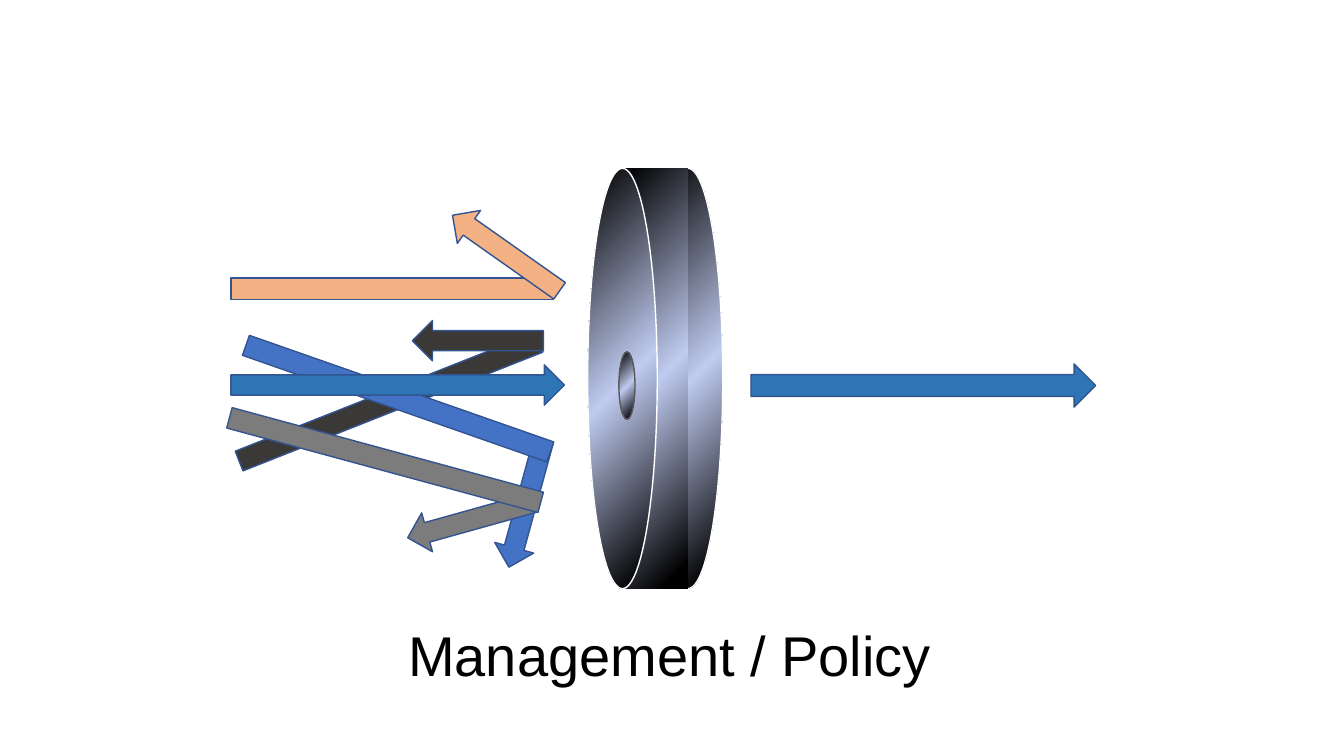
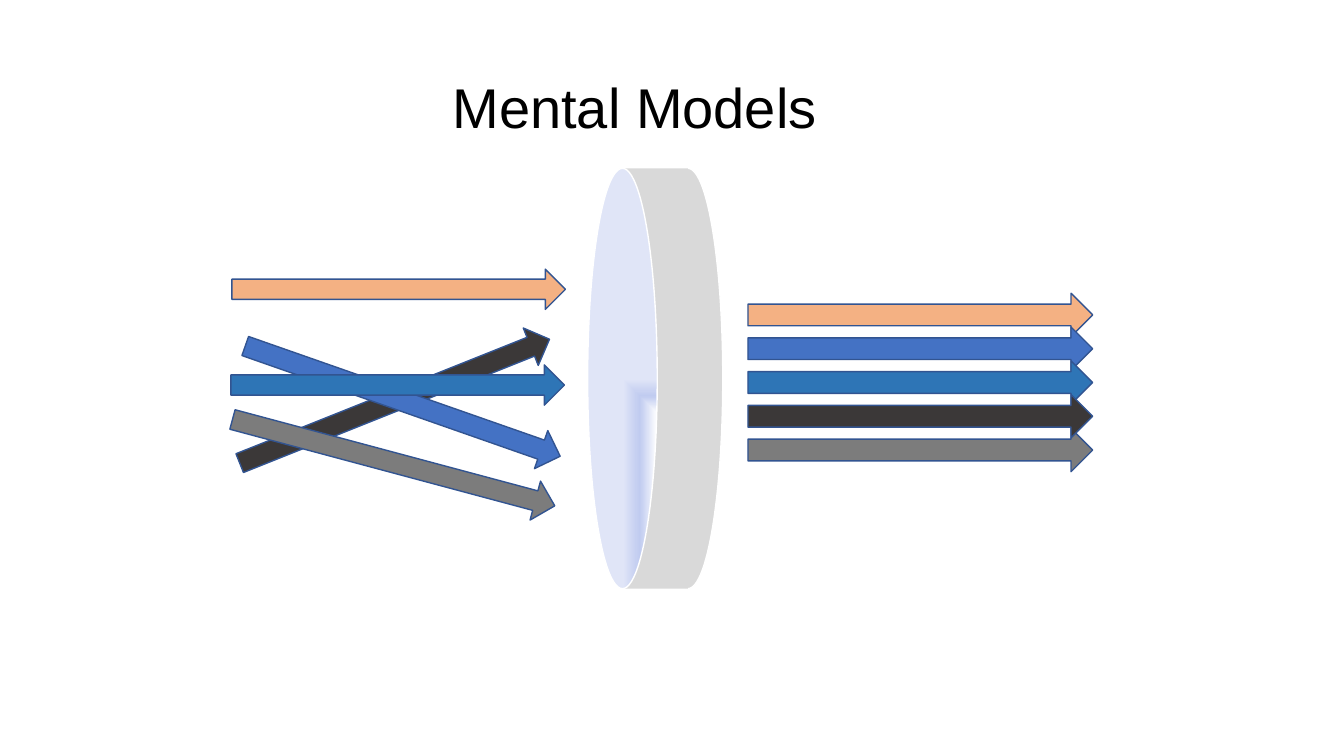
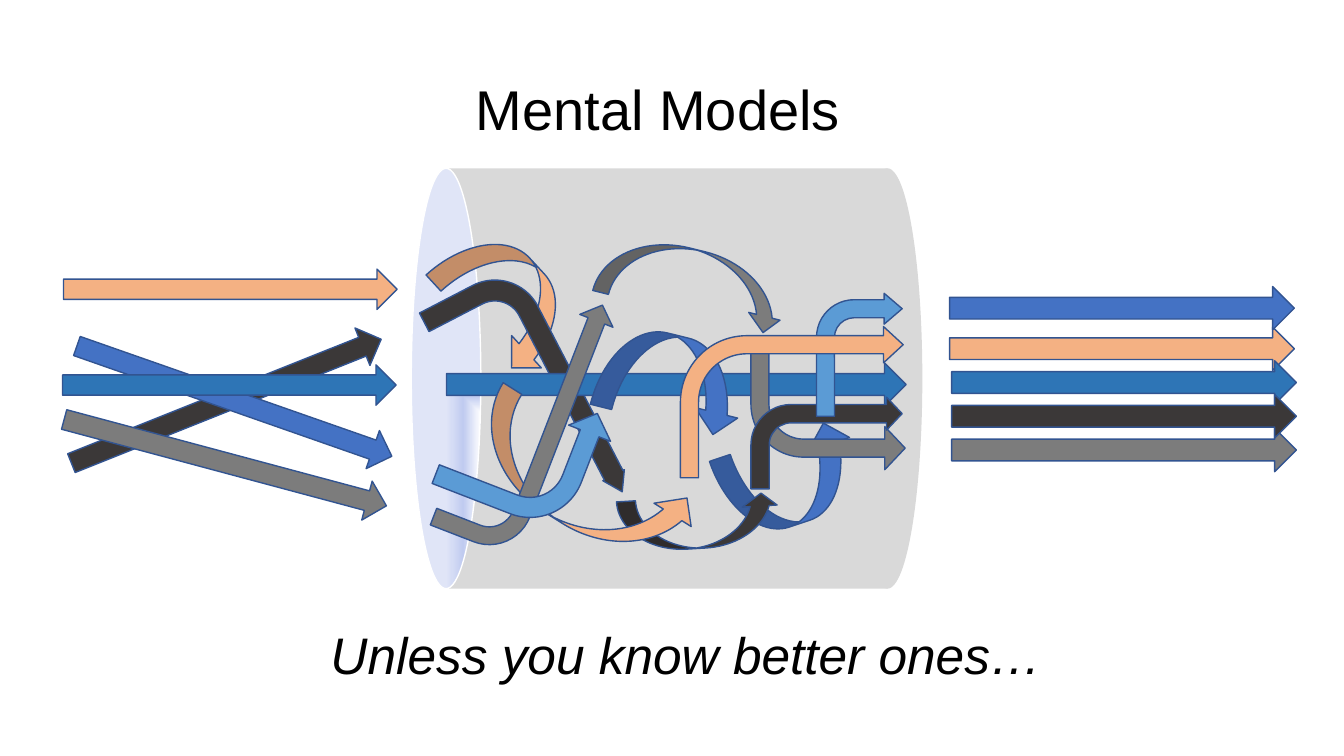
import dataclasses

import pptx
import pptx.dml.color
import pptx.enum.shapes
import pptx.enum.text
import pptx.oxml
import pptx.oxml.ns
import pptx.util

KINDS = pptx.enum.shapes.MSO_SHAPE
ARROW, BEAM, OVAL = KINDS.RIGHT_ARROW, KINDS.RECTANGLE, KINDS.OVAL
BENT, CURVED = KINDS.BENT_ARROW, KINDS.CURVED_RIGHT_ARROW

# Grid of 0.1 inch cells: every length below counts columns or rows
CELL = 91440
COLUMNS, ROWS = 133.33, 75


@dataclasses.dataclass(frozen=True)
class Gradient:
    path_kind: str
    stops: tuple


@dataclasses.dataclass(frozen=True)
class Theme:
    orange: str = "F4B183"
    blue: str = "4472C4"
    steel: str = "2E75B6"
    sky: str = "5B9BD5"
    dark: str = "3B3838"
    gray: str = "7C7C7C"
    outline: str = "325491"
    drum: str = "D9D9D9"
    white: str = "FFFFFF"
    hub_edge: str = "595959"
    text: str = "000000"
    metal: Gradient = Gradient("circle", ((5, "000000"), (49, "C0CBF0"), (99, "000000")))
    glass: Gradient = Gradient("rect", ((0, "FFFFFF"), (50, "C0CBF0"), (100, "E0E5F7")))
    font: str = "Arial"
    title_size: float = 40
    caption_size: float = 36.7
    line_width: float = 1


THEME = Theme()


@dataclasses.dataclass(frozen=True)
class Part:
    """A shape placed relative to the origin of its region."""
    kind: object
    left: float
    top: float
    width: float
    height: float
    fill: object
    line: str = THEME.outline
    rotation: float = 0
    flip: bool = False
    adjustments: tuple = ()


def cells(count):
    return pptx.util.Emu(round(count * CELL))


def rgb(value):
    return pptx.dml.color.RGBColor.from_string(value)


def fill_gradient(shape, gradient):
    """Fill from the lower right corner outwards."""
    shape.fill.gradient()
    stops = "".join(
        f'<a:gs pos="{position * 1000}"><a:srgbClr val="{color}"/></a:gs>'
        for position, color in gradient.stops)
    new_fill = pptx.oxml.parse_xml(
        f'<a:gradFill {pptx.oxml.ns.nsdecls("a")}><a:gsLst>{stops}</a:gsLst>'
        f'<a:path path="{gradient.path_kind}">'
        '<a:fillToRect l="100000" t="100000"/></a:path></a:gradFill>')
    properties = shape.element.spPr
    properties.replace(properties.find(pptx.oxml.ns.qn("a:gradFill")), new_fill)


def draw(shapes, origin, parts):
    left, top = origin
    for part in parts:
        shape = shapes.add_shape(
            part.kind, cells(left + part.left), cells(top + part.top),
            cells(part.width), cells(part.height))
        shape.shadow.inherit = False
        shape.rotation = part.rotation
        if part.flip:
            shape.element.spPr.find(pptx.oxml.ns.qn("a:xfrm")).set("flipV", "1")
        for index, value in enumerate(part.adjustments):
            shape.adjustments[index] = value
        if isinstance(part.fill, Gradient):
            fill_gradient(shape, part.fill)
        else:
            shape.fill.solid()
            shape.fill.fore_color.rgb = rgb(part.fill)
        if part.line:
            shape.line.color.rgb = rgb(part.line)
            shape.line.width = pptx.util.Pt(THEME.line_width)
        else:
            shape.line.fill.background()


# Text
def write(shape, box, text, size, italic=False):
    for name, value in zip(("left", "top", "width", "height"), box):
        setattr(shape, name, cells(value))
    frame_format = {
        "text": text,
        "word_wrap": False,
        "auto_size": pptx.enum.text.MSO_AUTO_SIZE.SHAPE_TO_FIT_TEXT,
        "vertical_anchor": pptx.enum.text.MSO_ANCHOR.TOP,
    }
    for name, value in frame_format.items():
        setattr(shape.text_frame, name, value)
    paragraph = shape.text_frame.paragraphs[0]
    paragraph.alignment = pptx.enum.text.PP_ALIGN.LEFT
    font = paragraph.runs[0].font
    font_format = {"name": THEME.font, "size": pptx.util.Pt(size), "italic": italic}
    for name, value in font_format.items():
        setattr(font, name, value)
    font.color.rgb = rgb(THEME.text)


def titled_slide(presentation, box, title):
    slide = presentation.slides.add_slide(presentation.slide_layouts[5])
    write(slide.shapes.title, box, title, THEME.title_size)
    return slide


def caption(slide, box, text):
    shape = slide.shapes.add_textbox(*map(cells, box))
    write(shape, box, text, THEME.caption_size, italic=True)


# Regions
def drum(slide, origin, depth, face, body, rear_line=THEME.white):
    """A cylinder on its side: rear end, body, front face."""
    width, height = 6.9, 41.7
    draw(slide.shapes, origin, [
        Part(OVAL, depth, 0, width, height, body, rear_line),
        Part(BEAM, width / 2, 0, depth, height, body, None),
        Part(OVAL, 0, 0, width, height, face, THEME.white),
    ])


def incoming_arrows(slide, origin):
    """Five arrows that cross on their way in."""
    size = (33.1, 4)
    group = slide.shapes.add_group_shape()
    draw(group.shapes, origin, [
        Part(ARROW, 0.1, 11.1, *size, THEME.dark, rotation=338.2),
        Part(ARROW, 0.9, 11.1, *size, THEME.blue, rotation=19.3),
        Part(ARROW, 0.5, 0, *size, THEME.orange),
        Part(ARROW, 0, 17.2, *size, THEME.gray, rotation=15),
    ])
    draw(slide.shapes, origin, [Part(ARROW, 0.4, 9.5, *size, THEME.steel)])


def deflected_arrows(slide, origin):
    """One arrow reaches the drum, four beams bounce off it."""
    beam, bounce = (32, 2.1), (13, 4)
    draw(slide.shapes, origin, [
        Part(BEAM, 0.7, 4.5, *beam, THEME.orange),
        Part(ARROW, 21.5, 0, *bounce, THEME.orange, rotation=215.2),
        Part(BEAM, 0.4, 15.7, *beam, THEME.dark, rotation=338.4),
        Part(ARROW, 18.7, 8.7, *bounce, THEME.dark, rotation=180),
        Part(ARROW, 23.5, 24.9, *bounce, THEME.blue, rotation=105.3),
        Part(ARROW, 18, 26.5, *bounce, THEME.gray, rotation=164.4),
        Part(BEAM, 0, 21.5, *beam, THEME.gray, rotation=15.2),
        Part(BEAM, 1.3, 15.4, *beam, THEME.blue, rotation=19.3),
        Part(ARROW, 0.7, 13.1, 33.1, 4, THEME.steel),
    ])


def outgoing_arrows(slide, origin, lanes):
    """Parallel arrows; each lane is colour, row and shift to the right."""
    pitch = 3.35
    draw(slide.shapes, origin, [
        Part(ARROW, shift, row * pitch, 34.2, 4.3, color)
        for color, row, shift in lanes])


def tangled_arrows(slide, origin):
    """Bent and curved paths inside the long drum, back to front."""
    draw(slide.shapes, origin, [
        Part(CURVED, 33.3, 23.9, 8.7, 14.1, THEME.blue, rotation=251.4),
        Part(CURVED, 5.3, 5.7, 8.7, 14.7, THEME.orange, rotation=137.4, flip=True),
        Part(BENT, -1.1, 17.5, 25, 10.9, THEME.dark, rotation=62.6,
             adjustments=(0.19, 0.11, 0.17, 0.44)),
        Part(ARROW, 3.5, 19.3, 45.6, 4.3, THEME.steel),
        Part(CURVED, 21.6, 13.6, 8.7, 14.7, THEME.blue, rotation=103.9, flip=True),
        Part(CURVED, 26, 27.1, 5.1, 16.1, THEME.dark, rotation=266.5,
             adjustments=(0.37, 0.68, 0.25)),
        Part(CURVED, 24.8, 1.8, 6.4, 19, THEME.gray, rotation=103.9, flip=True),
        Part(CURVED, 12.5, 19.4, 8.7, 23.7, THEME.orange, rotation=302.1),
        Part(BENT, 33.7, 18, 15.3, 11.9, THEME.gray, flip=True,
             adjustments=(0.15, 0.18, 0.17, 0.44)),
        Part(BENT, 33.7, 22.7, 15, 9.1, THEME.dark,
             adjustments=(0.2, 0.18, 0.17, 0.44)),
        Part(BENT, 40.2, 12.4, 8.5, 12.2, THEME.sky,
             adjustments=(0.21, 0.18, 0.21, 0.44)),
        Part(BENT, 26.7, 15.7, 22.1, 15, THEME.orange,
             adjustments=(0.12, 0.12, 0.13, 0.44)),
        Part(BENT, -2, 19.9, 26.5, 9.8, THEME.gray, rotation=291.2, flip=True,
             adjustments=(0.18, 0.18, 0.17, 0.44)),
        Part(BENT, 5.1, 20.7, 12.4, 15, THEME.sky, rotation=291.2, flip=True,
             adjustments=(0.16, 0.18, 0.17, 0.44)),
    ])


# Slides
def policy_slide(presentation):
    slide = titled_slide(presentation, (39.5, 61.1, 54.4, 7.7), "Management / Policy")
    drum_origin = (58.3, 16.7)
    drum(slide, drum_origin, 6.5, THEME.metal, THEME.metal)
    draw(slide.shapes, drum_origin, [
        Part(OVAL, 3.1, 18.2, 1.6, 6.7, THEME.metal, THEME.hub_edge)])
    deflected_arrows(slide, (22.2, 23.1))
    outgoing_arrows(slide, (74.5, 36.1), [(THEME.steel, 0, 0)])


def models_slide(presentation):
    slide = titled_slide(presentation, (43.9, 6.7, 38.5, 7.7), "Mental Models")
    incoming_arrows(slide, (22.5, 26.7))
    drum(slide, (58.3, 16.7), 6.5, THEME.glass, THEME.drum)
    outgoing_arrows(slide, (74.2, 29.1), [
        (THEME.orange, 0, 0), (THEME.blue, 1, 0), (THEME.gray, 4, 0),
        (THEME.steel, 2, 0), (THEME.dark, 3, 0)])


def better_models_slide(presentation):
    slide = titled_slide(presentation, (46.2, 6.9, 38.5, 7.7), "Mental Models")
    incoming_arrows(slide, (5.8, 26.7))
    drum_origin = (40.8, 16.7)
    drum(slide, drum_origin, 43.8, THEME.glass, THEME.drum, rear_line=None)
    outgoing_arrows(slide, (94.2, 29.1), [
        (THEME.orange, 1, 0), (THEME.blue, -0.2, 0), (THEME.gray, 4, 0.2),
        (THEME.steel, 2, 0.2), (THEME.dark, 3, 0.2)])
    tangled_arrows(slide, drum_origin)
    caption(slide, (31.8, 61.3, 73.2, 7.2), "Unless you know better ones…")


def main():
    presentation = pptx.Presentation()
    presentation.slide_width = cells(COLUMNS)
    presentation.slide_height = cells(ROWS)
    for build in (policy_slide, models_slide, better_models_slide):
        build(presentation)
    presentation.save("out.pptx")


if __name__ == "__main__":
    main()
